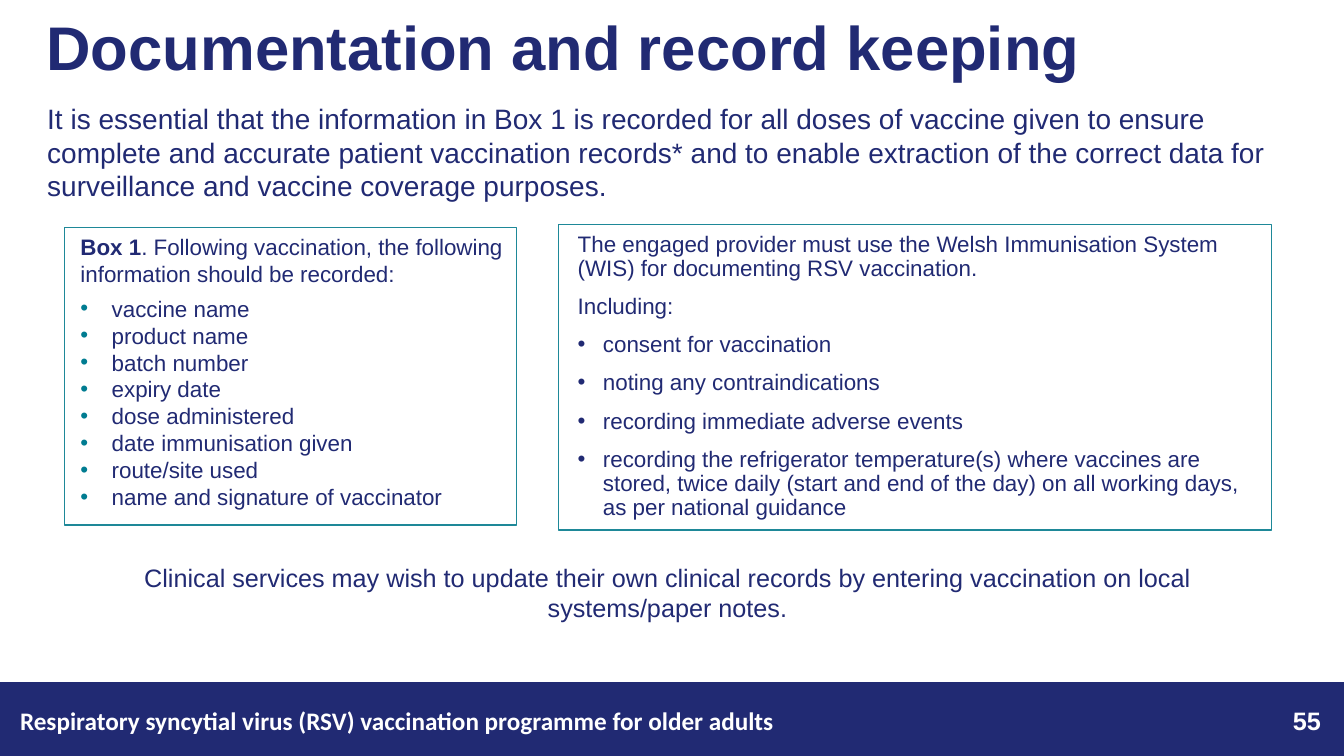
from dataclasses import dataclass

from lxml.etree import SubElement as Sub
from pptx import Presentation
from pptx.dml.color import RGBColor as Rgb
from pptx.enum.shapes import MSO_SHAPE as Shape
from pptx.enum.text import MSO_ANCHOR as Anchor, MSO_AUTO_SIZE as Fit, PP_ALIGN as Align
from pptx.oxml.ns import qn
from pptx.util import Inches, Pt


@dataclass(frozen=True)
class Theme:
    navy: str = "212A73"
    teal: str = "007C91"
    edge: str = "1E8898"
    white: str = "FFFFFF"
    face: str = "Arial"
    foot: str = "Calibri"
    head: int = 44
    lead: int = 20
    note: int = 18
    text: int = 16


class Deck:
    def __init__(self, theme):
        self.theme = theme
        self.prs = Presentation()
        self.prs.slide_width = Inches(13.33)
        self.prs.slide_height = Inches(7.5)
        self.slide = self.prs.slides.add_slide(self.prs.slide_layouts[1])

    def place(self, shape, box):
        shape.left, shape.top, shape.width, shape.height = map(Inches, box)
        frame = shape.text_frame
        frame.word_wrap = True
        frame.auto_size = Fit.NONE
        frame.vertical_anchor = Anchor.TOP
        return frame

    def style(self, para, size, color=None, face=None, bold=False,
              align=Align.LEFT, space=1.0, before=0):
        para.alignment = align
        para.line_spacing = space
        para.space_before = Pt(before)
        font = para.font
        font.name = face or self.theme.face
        font.size = Pt(size)
        font.bold = bold
        font.color.rgb = Rgb.from_string(color or self.theme.navy)

    def bullet(self, para, indent=0, color=None):
        """Set a hanging bullet, or none when there is no indent."""
        props = para._p.get_or_add_pPr()
        props.set("marL", str(Inches(indent)))
        props.set("indent", str(-Inches(indent)))
        if not indent:
            Sub(props, qn("a:buNone"))
            return
        tint = Sub(props, qn("a:buClr"))
        Sub(tint, qn("a:srgbClr"), val=color or self.theme.navy)
        Sub(props, qn("a:buFont"), typeface=self.theme.face)
        Sub(props, qn("a:buChar"), char="•")

    def title(self, text, box):
        frame = self.place(self.slide.shapes.title, box)
        frame.text = text
        self.style(frame.paragraphs[0], self.theme.head, bold=True, space=0.9)

    def body(self, intro, items, box):
        frame = self.place(self.slide.placeholders[1], box)
        frame.text = "\n".join(intro + items)
        for i, para in enumerate(frame.paragraphs):
            self.bullet(para, 0.25 if i >= len(intro) else 0)
            self.style(para, self.theme.text, space=0.9, before=10 if i else 0)

    def label(self, text, box, size, **look):
        frame = self.place(self.slide.shapes.add_textbox(0, 0, 0, 0), box)
        frame.text = text
        self.style(frame.paragraphs[0], size, **look)
        return frame

    def list(self, lead, rest, items, box):
        frame = self.label(lead, box, self.theme.text)
        first = frame.paragraphs[0]
        first.runs[0].font.bold = True
        first.add_run().text = rest
        for i, item in enumerate(items):
            para = frame.add_paragraph()
            para.text = item
            self.bullet(para, 0.31, self.theme.teal)
            self.style(para, self.theme.text, before=0 if i else 6)

    def rect(self, box, line, fill=None):
        shape = self.slide.shapes.add_shape(Shape.RECTANGLE, *map(Inches, box))
        shape.shadow.inherit = False
        shape.line.color.rgb = Rgb.from_string(line)
        shape.line.width = Pt(1)
        if fill:
            shape.fill.solid()
            shape.fill.fore_color.rgb = Rgb.from_string(fill)
        else:
            shape.fill.background()


def main():
    theme = Theme()
    deck = Deck(theme)

    # Heading and lead text
    deck.title("Documentation and record keeping", (0.36, 0.12, 11.5, 1.06))
    deck.label("It is essential that the information in Box 1 is recorded for all doses "
               "of vaccine given to ensure complete and accurate patient vaccination "
               "records* and to enable extraction of the correct data for surveillance "
               "and vaccine coverage purposes.", (0.37, 0.96, 12.61, 1.45), theme.lead)

    # Left box: what to record
    deck.rect((0.64, 2.26, 4.48, 2.95), theme.edge)
    deck.list("Box 1", ". Following vaccination, the following information should be recorded:",
              ["vaccine name", "product name", "batch number", "expiry date",
               "dose administered", "date immunisation given", "route/site used",
               "name and signature of vaccinator"], (0.7, 2.26, 4.44, 3.18))

    # Right box: where to record it
    deck.rect((5.54, 2.23, 7.07, 3.03), theme.edge)
    deck.body(["The engaged provider must use the Welsh Immunisation System (WIS) for "
               "documenting RSV vaccination.", "Including:"],
              ["consent for vaccination", "noting any contraindications",
               "recording immediate adverse events",
               "recording the refrigerator temperature(s) where vaccines are stored, "
               "twice daily (start and end of the day) on all working days, as per "
               "national guidance"], (5.63, 2.26, 6.88, 3.55))

    # Closing note
    deck.label("Clinical services may wish to update their own clinical records by "
               "entering vaccination on local systems/paper notes.",
               (0.64, 5.53, 11.96, 0.71), theme.note, align=Align.CENTER)

    # Footer
    deck.rect((0, 6.77, 13.33, 0.73), theme.navy, theme.navy)
    deck.label("Respiratory syncytial virus (RSV) vaccination programme for older adults",
               (0.1, 6.95, 10.31, 0.44), theme.note, color=theme.white,
               face=theme.foot, bold=True)
    deck.label("55", (11.86, 6.95, 1.34, 0.41), theme.note, color=theme.white,
               bold=True, align=Align.RIGHT)

    deck.prs.save("out.pptx")


if __name__ == "__main__":
    main()
